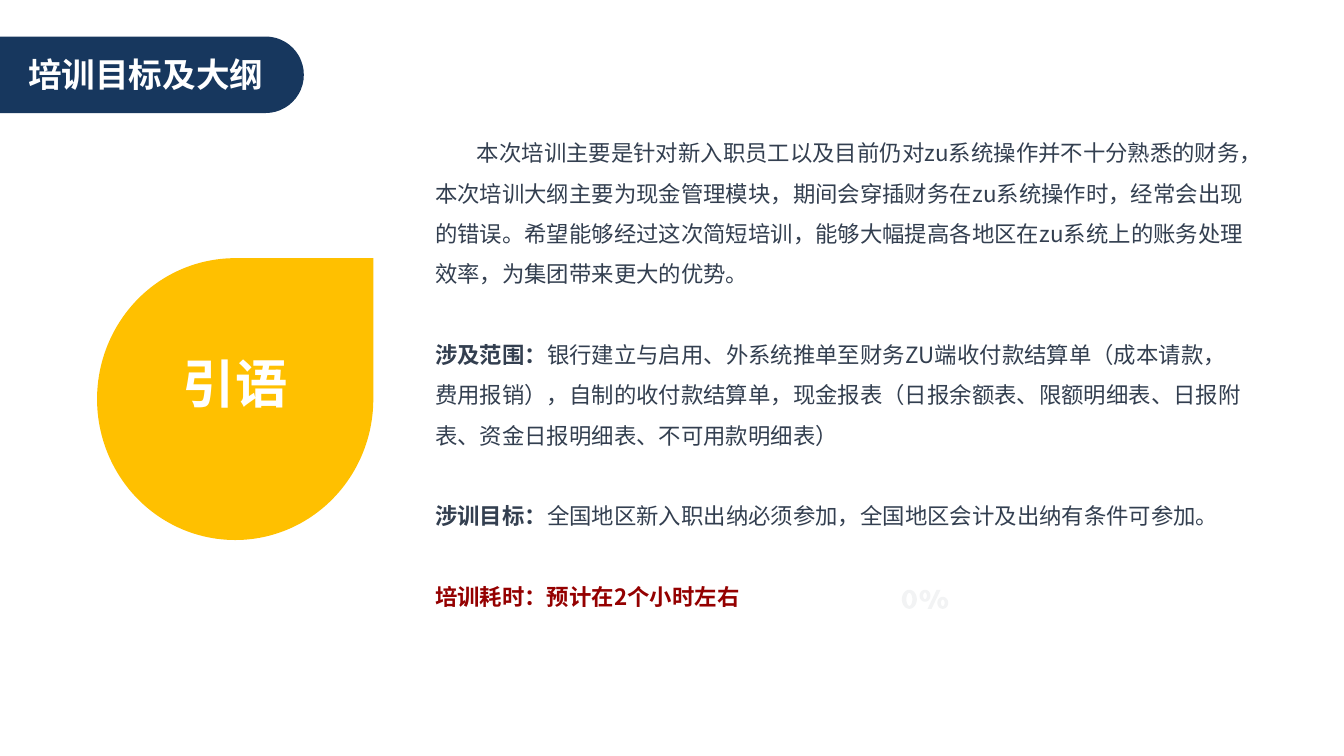
from dataclasses import dataclass
from math import cos, pi, sin

from lxml import etree
from pptx import Presentation
from pptx.dml.color import RGBColor
from pptx.enum import shapes, text
from pptx.oxml import ns
from pptx.util import Pt


@dataclass(frozen=True)
class Theme:
    font: str = "Noto Sans CJK SC"
    navy: str = "17375E"
    amber: str = "FFC000"
    ink: str = "333F50"
    red: str = "940000"
    pale: str = "F2F3F4"
    white: str = "FFFFFF"
    title_size: float = 18
    badge_size: float = 28
    body_size: float = 12
    body_line: float = 21.6


THEME = Theme()

# Each paragraph is a bold label, plain text and a colour.
PARAGRAPHS = [
    ("", "本次培训主要是针对新入职员工以及目前仍对zu系统操作并不十分熟悉的财务，"
     "本次培训大纲主要为现金管理模块，期间会穿插财务在zu系统操作时，经常会出现的错误。"
     "希望能够经过这次简短培训，能够大幅提高各地区在zu系统上的账务处理效率，"
     "为集团带来更大的优势。", THEME.ink),
    ("涉及范围：", "银行建立与启用、外系统推单至财务ZU端收付款结算单（成本请款，费用报销），"
     "自制的收付款结算单，现金报表（日报余额表、限额明细表、日报附表、"
     "资金日报明细表、不可用款明细表）", THEME.ink),
    ("涉训目标：", "全国地区新入职出纳必须参加，全国地区会计及出纳有条件可参加。", THEME.ink),
    ("培训耗时：预计在2个小时左右", "", THEME.red),
]


def paint(shape, color):
    shape.shadow.inherit = False
    shape.fill.solid()
    shape.fill.fore_color.rgb = RGBColor.from_string(color)
    shape.line.fill.background()


def set_font(paragraph, size, color):
    paragraph.font.name = THEME.font
    paragraph.font.size = Pt(size)
    paragraph.font.color.rgb = RGBColor.from_string(color)


def add_run(paragraph, words, bold):
    """Add a run whose East Asian typeface is the theme font too."""
    run = paragraph.add_run()
    run.text = words
    run.font.bold = bold
    run.font.name = THEME.font
    etree.SubElement(run.font._element, ns.qn("a:ea"), typeface=THEME.font)


def add_text_frame(slide, box, anchor):
    frame = slide.shapes.add_textbox(*map(Pt, box)).text_frame
    frame.word_wrap = True
    frame.vertical_anchor = anchor
    return frame


def add_title(slide, box):
    """Draw the title tab, which runs in from the left edge of the slide."""
    left, top, width, height = box
    tab = slide.shapes.add_shape(shapes.MSO_SHAPE.ROUNDED_RECTANGLE, *map(Pt, box))
    tab.adjustments[0] = 0.5
    paint(tab, THEME.navy)
    label_box = (8, top - 0.5, left + width - 10, height)
    frame = add_text_frame(slide, label_box, text.MSO_ANCHOR.MIDDLE)
    paragraph = frame.paragraphs[0]
    set_font(paragraph, THEME.title_size, THEME.white)
    add_run(paragraph, "培训目标及大纲", True)


def add_badge(slide, box):
    left, top, width, height = box
    paint(slide.shapes.add_shape(shapes.MSO_SHAPE.TEAR, *map(Pt, box)), THEME.amber)
    label_box = (left, top + height / 2 - 30, width, 42)
    frame = add_text_frame(slide, label_box, text.MSO_ANCHOR.MIDDLE)
    paragraph = frame.paragraphs[0]
    paragraph.alignment = text.PP_ALIGN.CENTER
    set_font(paragraph, THEME.badge_size, THEME.white)
    add_run(paragraph, "引语", True)


def add_body(slide, box):
    frame = add_text_frame(slide, box, text.MSO_ANCHOR.TOP)
    frame.margin_top = Pt(7)
    for index, (label, words, color) in enumerate(PARAGRAPHS):
        paragraph = frame.add_paragraph() if index else frame.paragraphs[0]
        paragraph.line_spacing = Pt(THEME.body_line)
        if index:
            paragraph.space_before = Pt(THEME.body_line)
        else:
            paragraph._p.get_or_add_pPr().set("indent", str(Pt(22.4)))
        set_font(paragraph, THEME.body_size, color)
        for part, bold in ((label, True), (words, False)):
            if part:
                add_run(paragraph, part, bold)


def ellipse(center_x, center_y, radius_x, radius_y, steps=32):
    angles = [2 * pi * step / steps for step in range(steps)]
    return [(center_x + radius_x * cos(a), center_y + radius_y * sin(a)) for a in angles]


def add_outline(slide, contours):
    """Fill closed contours as one shape, inner ones being holes."""
    builder = None
    for contour in contours:
        points = [(Pt(x), Pt(y)) for x, y in contour]
        if builder is None:
            builder = slide.shapes.build_freeform(*points[0], scale=1.0)
        else:
            builder.move_to(*points[0])
        builder.add_line_segments(points[1:], close=True)
    paint(builder.convert_to_shape(), THEME.pale)


def add_zero_percent(slide, box):
    """Draw a pale 0% as outlines: a tall ring, then two rings and a stroke."""
    left, top, width, height = box
    middle = top + height / 2
    add_outline(slide, [ellipse(left + 4, middle, 4, height / 2),
                        ellipse(left + 4, middle, 1.6, height / 2 - 1.6)])
    right, bottom = left + width, top + height
    contours = [[(right - 6.2, top), (right - 4.1, top),
                 (right - 8.9, bottom), (right - 11, bottom)]]
    for x, y in ((right - 12.4, top + 3.2), (right - 2.9, bottom - 3.2)):
        contours += [ellipse(x, y, 2.9, 3.2), ellipse(x, y, 1, 1.8)]
    add_outline(slide, contours)


def main():
    presentation = Presentation()
    presentation.slide_width, presentation.slide_height = Pt(720), Pt(405)
    slide = presentation.slides.add_slide(presentation.slide_layouts[6])
    add_badge(slide, (52, 138.3, 148, 151))
    add_body(slide, (226, 60.5, 449.5, 273))
    add_zero_percent(slide, (483.2, 316, 24.8, 10.2))
    add_title(slide, (-27.4, 19.6, 190.2, 41))
    presentation.save("out.pptx")


if __name__ == "__main__":
    main()
